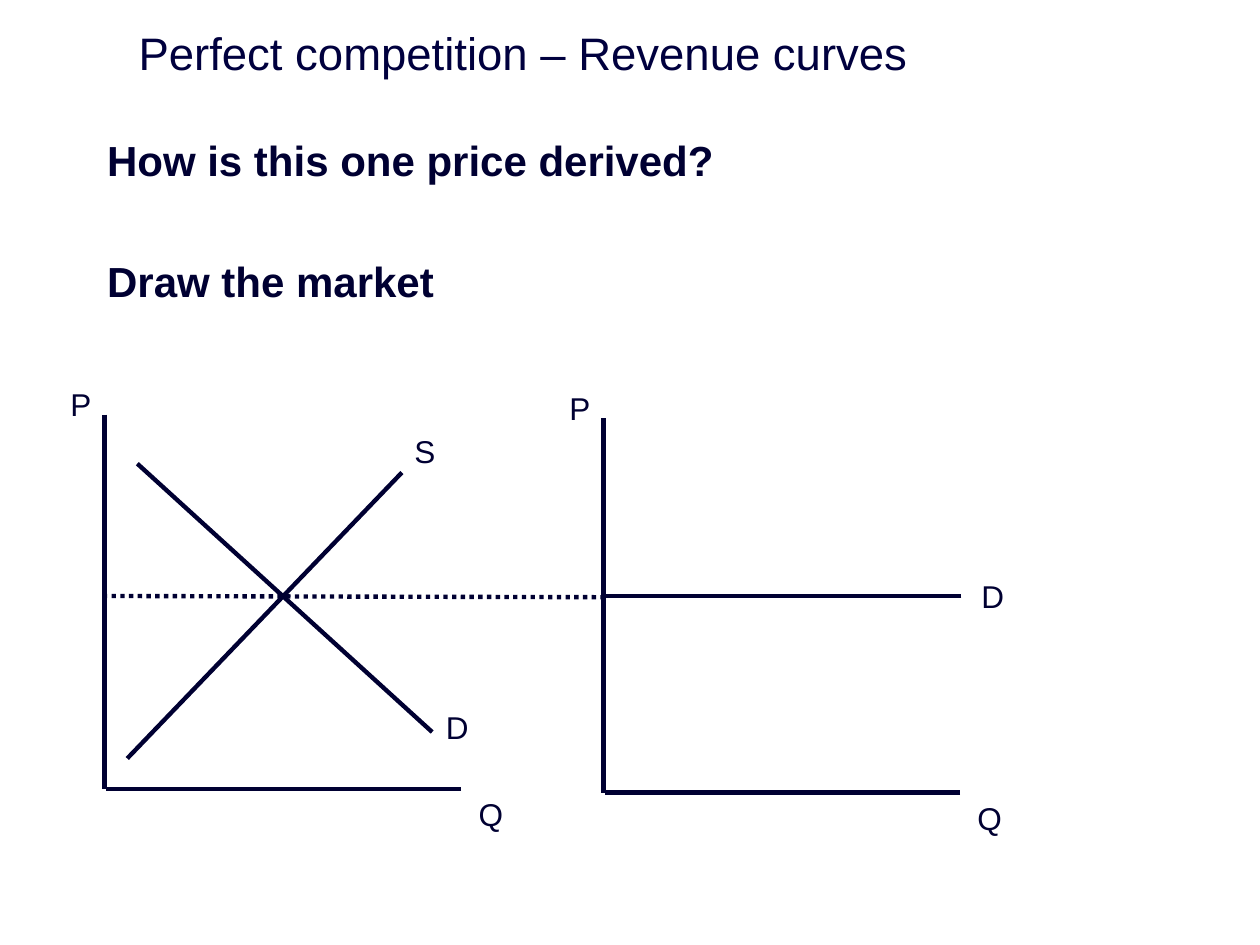
import dataclasses

import pptx
import pptx.dml.color
import pptx.enum.dml
import pptx.enum.shapes
import pptx.enum.text
import pptx.oxml.ns
import pptx.util
from lxml import etree

Inches = pptx.util.Inches
Pt = pptx.util.Pt


@dataclasses.dataclass(frozen=True)
class Theme:
    font: str = "Arial"
    head: str = "00003E"
    ink: str = "000032"
    title: int = 26
    body: int = 24
    label: int = 18
    line: float = 2.5


def rgb(code):
    return pptx.dml.color.RGBColor.from_string(code)


def write(para, text, *, font, size, color, bold=False, before=0):
    para.alignment = pptx.enum.text.PP_ALIGN.LEFT
    para.space_before = Pt(before)
    run = para.add_run()
    run.text = text
    run.font.name = font
    run.font.size = Pt(size)
    run.font.bold = bold
    run.font.color.rgb = rgb(color)


def place(shape, left, top, width, height):
    shape.left, shape.top = Inches(left), Inches(top)
    shape.width, shape.height = Inches(width), Inches(height)


class Painter:
    def __init__(self, slide, theme):
        self.slide = slide
        self.theme = theme

    def title(self, text, *box):
        shape = self.slide.shapes.title
        place(shape, *box)
        frame = shape.text_frame
        frame.auto_size = pptx.enum.text.MSO_AUTO_SIZE.NONE
        frame.vertical_anchor = pptx.enum.text.MSO_ANCHOR.MIDDLE
        write(frame.paragraphs[0], text, font=self.theme.font,
              size=self.theme.title, color=self.theme.head)

    def body(self, items, gap, *box):
        shape = self.slide.placeholders[1]
        place(shape, *box)
        frame = shape.text_frame
        frame.auto_size = pptx.enum.text.MSO_AUTO_SIZE.NONE
        for i, text in enumerate(items):
            para = frame.add_paragraph() if i else frame.paragraphs[0]
            props = para._p.get_or_add_pPr()
            props.set("marL", str(Inches(0.38)))
            props.set("indent", str(-Inches(0.38)))
            etree.SubElement(props, pptx.oxml.ns.qn("a:buNone"))
            write(para, text, font=self.theme.font, size=self.theme.body,
                  color=self.theme.ink, bold=True, before=gap if i else 0)

    def label(self, text, left, top):
        box = self.slide.shapes.add_textbox(
            Inches(left), Inches(top), Inches(0.64), Inches(0.4))
        box.text_frame.word_wrap = True
        write(box.text_frame.paragraphs[0], text, font=self.theme.font,
              size=self.theme.label, color=self.theme.ink)

    def line(self, x1, y1, x2, y2, dash=None):
        link = self.slide.shapes.add_connector(
            pptx.enum.shapes.MSO_CONNECTOR.STRAIGHT,
            Inches(x1), Inches(y1), Inches(x2), Inches(y2))
        link.line.color.rgb = rgb(self.theme.ink)
        link.line.width = Pt(self.theme.line)
        if dash:
            link.line.dash_style = dash
        etree.SubElement(link._element.spPr, pptx.oxml.ns.qn("a:effectLst"))

    def axes(self, x, y):
        self.line(x, y - 2.97, x, y)
        self.line(x + 2.83, y, x + 0.01, y)
        self.label("Q", x + 2.87, y)
        self.label("P", x - 0.37, y - 3.25)


def main():
    deck = pptx.Presentation()
    deck.slide_width, deck.slide_height = Inches(10), Inches(7.5)
    slide = deck.slides.add_slide(deck.slide_layouts[1])
    pen = Painter(slide, Theme())

    pen.title("Perfect competition – Revenue curves", 1, 0.16, 9, 0.51)
    pen.body(["How is this one price derived?", "Draw the market"], 40,
             0.75, 1.02, 8.83, 4.92)

    pen.axes(0.83, 6.26)
    pen.line(3.19, 3.75, 1.01, 6.02)
    pen.line(3.43, 5.81, 1.09, 3.68)
    pen.label("S", 3.19, 3.38)
    pen.label("D", 3.44, 5.57)

    pen.axes(4.79, 6.29)
    pen.line(7.63, 4.73, 4.81, 4.73)
    pen.label("D", 7.69, 4.53)
    pen.line(4.8, 4.74, 0.81, 4.73, pptx.enum.dml.MSO_LINE.ROUND_DOT)

    deck.save("out.pptx")


if __name__ == "__main__":
    main()
